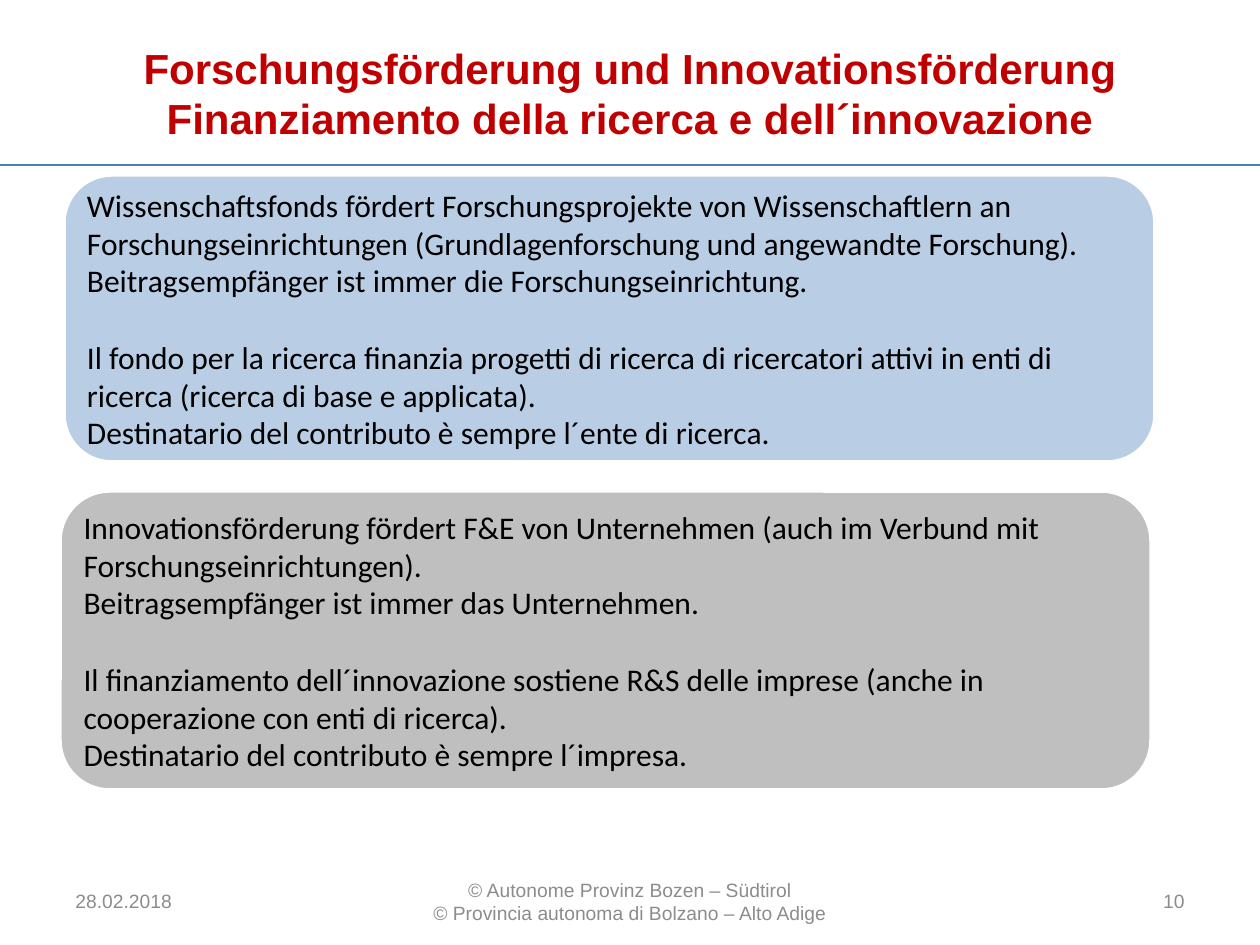
"""Build the slide on research and innovation funding."""
from dataclasses import dataclass

from lxml import etree
from pptx import Presentation
from pptx.dml.color import RGBColor
from pptx.enum import shapes, text
from pptx.oxml.ns import qn
from pptx.util import Emu, Pt

PX = 914400 / 126
LEFT, CENTER, RIGHT = text.PP_ALIGN.LEFT, text.PP_ALIGN.CENTER, text.PP_ALIGN.RIGHT


@dataclass(frozen=True)
class Box:
    left: int
    top: int
    width: int
    height: int

    def emu(self) -> list[Emu]:
        return [px(n) for n in (self.left, self.top, self.width, self.height)]


@dataclass(frozen=True)
class Panel:
    box: Box
    fill: str
    german: tuple[str, ...]
    italian: tuple[str, ...]


@dataclass(frozen=True)
class Footer:
    box: Box
    lines: tuple[str, ...]
    align: text.PP_ALIGN


PANELS = (
    Panel(
        Box(64, 175, 1091, 287), "B9CDE5",
        ("Wissenschaftsfonds fördert Forschungsprojekte von Wissenschaftlern an "
         "Forschungseinrichtungen (Grundlagenforschung und angewandte Forschung).",
         "Beitragsempfänger ist immer die Forschungseinrichtung."),
        ("Il fondo per la ricerca finanzia progetti di ricerca di ricercatori attivi "
         "in enti di ricerca (ricerca di base e applicata).",
         "Destinatario del contributo è sempre l´ente di ricerca."),
    ),
    Panel(
        Box(60, 491, 1091, 299), "BFBFBF",
        ("Innovationsförderung fördert F&E von Unternehmen (auch im Verbund mit "
         "Forschungseinrichtungen).",
         "Beitragsempfänger ist immer das Unternehmen."),
        ("Il finanziamento dell´innovazione sostiene R&S delle imprese (anche in "
         "cooperazione con enti di ricerca).",
         "Destinatario del contributo è sempre l´impresa."),
    ),
)

FOOTERS = (
    Footer(Box(63, 876, 294, 50), ("28.02.2018",), LEFT),
    Footer(Box(412, 876, 436, 50),
           ("© Autonome Provinz Bozen – Südtirol",
            "© Provincia autonoma di Bolzano – Alto Adige"), CENTER),
    Footer(Box(903, 876, 294, 50), ("10",), RIGHT),
)


def px(length: int) -> Emu:
    return Emu(round(length * PX))


def color(value: str) -> RGBColor:
    return RGBColor.from_string(value)


def write(frame, lines, *, size, font, ink, align=LEFT, bold=False, gap_at=None, gap=0):
    frame.word_wrap = True
    frame.auto_size = text.MSO_AUTO_SIZE.NONE
    frame.vertical_anchor = text.MSO_ANCHOR.MIDDLE
    frame.text = "\n".join(lines)
    for index, paragraph in enumerate(frame.paragraphs):
        paragraph.alignment = align
        paragraph.space_before = Pt(gap if index == gap_at else 0)
        for run in paragraph.runs:
            run.font.name, run.font.size, run.font.bold = font, Pt(size), bold
            run.font.color.rgb = color(ink)


def draw_title(slide) -> None:
    title = slide.shapes.title
    title.left, title.top, title.width, title.height = Box(63, 38, 1134, 157).emu()
    write(title.text_frame,
          ["Forschungsförderung und Innovationsförderung\v"
           "Finanziamento della ricerca e dell´innovazione"],
          size=24, font="Arial", ink="C00000", align=CENTER, bold=True)
    title.text_frame.margin_top, title.text_frame.margin_bottom = px(6), px(54)


def draw_rule(slide, top: int) -> None:
    rule = slide.shapes.add_connector(
        shapes.MSO_CONNECTOR.STRAIGHT, 0, px(top), px(1260), px(top))
    rule.line.color.rgb = color("4B7EBC")
    rule.line.width = Pt(1)
    etree.SubElement(rule._element.spPr, qn("a:effectLst"))


def draw_panel(slide, panel: Panel) -> None:
    shape = slide.shapes.add_shape(shapes.MSO_SHAPE.ROUNDED_RECTANGLE, *panel.box.emu())
    shape.shadow.inherit = False
    shape.fill.solid()
    shape.fill.fore_color.rgb = color(panel.fill)
    shape.line.color.rgb = color("FFFFFF")
    shape.line.width = Pt(2)
    frame = shape.text_frame
    frame.margin_left = frame.margin_right = frame.margin_top = frame.margin_bottom = px(9)
    write(frame, panel.german + panel.italian, size=18, font="Calibri", ink="000000",
          gap_at=len(panel.german), gap=22)


def draw_footer(slide, footer: Footer) -> None:
    box = slide.shapes.add_textbox(*footer.box.emu())
    write(box.text_frame, footer.lines, size=11, font="Arial", ink="8C8C8C",
          align=footer.align)


def main() -> None:
    deck = Presentation()
    deck.slide_width, deck.slide_height = px(1260), px(945)
    slide = deck.slides.add_slide(deck.slide_layouts.get_by_name("Title Only"))
    draw_rule(slide, 165)
    draw_title(slide)
    for footer in FOOTERS:
        draw_footer(slide, footer)
    for panel in PANELS:
        draw_panel(slide, panel)
    deck.save("out.pptx")


if __name__ == "__main__":
    main()
